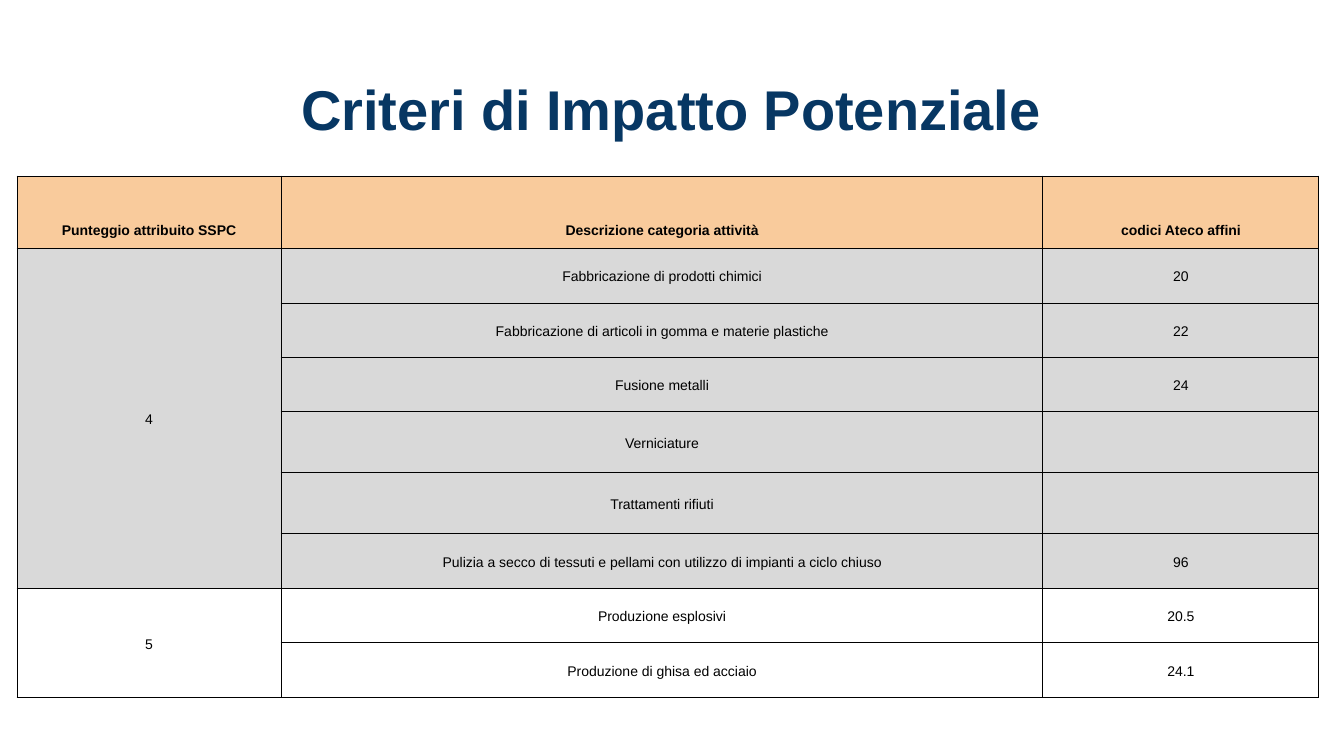
from itertools import pairwise

from lxml.etree import SubElement
from pptx import Presentation
from pptx.dml.color import RGBColor
from pptx.enum.text import MSO_ANCHOR as Anchor, PP_ALIGN as Align
from pptx.oxml.ns import qn
from pptx.util import Emu, Pt

TITLE = "Criteri di Impatto Potenziale"
HEADERS = ("Punteggio attribuito SSPC", "Descrizione categoria attività", "codici Ateco affini")
SCORE_GROUPS = [
    ("4", "grey", [
        ("Fabbricazione di prodotti chimici", "20"),
        ("Fabbricazione di articoli in gomma e materie plastiche", "22"),
        ("Fusione metalli", "24"),
        ("Verniciature", ""),
        ("Trattamenti rifiuti", ""),
        ("Pulizia a secco di tessuti e pellami con utilizzo di impianti a ciclo chiuso", "96"),
    ]),
    ("5", None, [
        ("Produzione esplosivi", "20.5"),
        ("Produzione di ghisa ed acciaio", "24.1"),
    ]),
]
COLORS = {"navy": "073763", "peach": "F9CB9C", "grey": "D9D9D9", "black": "000000"}
FONT = "Arial"
SLIDE_SIZE = (1344, 756)
TITLE_BOX = (174, 64, 994, 88)
COLUMN_EDGES = (17, 281, 1043, 1319)
ROW_EDGES = (176, 248, 303, 358, 412, 473, 534, 589, 643, 698)
INSET_X, INSET_Y = 3, 10


def px(value):
    return Emu(round(value * 914400 / 100.8))


def write(paragraph, text, size, color, bold):
    paragraph.alignment = Align.CENTER
    if text:
        run = paragraph.add_run()
        run.text = text
        run.font.name = FONT
        run.font.size = Pt(size)
        run.font.bold = bold
        run.font.color.rgb = RGBColor.from_string(COLORS[color])


def add_borders(cell):
    properties = cell._tc.get_or_add_tcPr()
    for index, side in enumerate(("lnL", "lnR", "lnT", "lnB")):
        line = SubElement(properties, qn(f"a:{side}"), w=str(Pt(0.75)))
        fill = SubElement(line, qn("a:solidFill"))
        SubElement(fill, qn("a:srgbClr"), val=COLORS["black"])
        properties.insert(index, line)


def style_cell(cell, text, fill, header):
    cell.margin_left = cell.margin_right = px(INSET_X)
    cell.margin_top = cell.margin_bottom = px(INSET_Y)
    cell.vertical_anchor = Anchor.BOTTOM if header else Anchor.MIDDLE
    if fill:
        cell.fill.solid()
        cell.fill.fore_color.rgb = RGBColor.from_string(COLORS[fill])
    else:
        cell.fill.background()
    paragraph = cell.text_frame.paragraphs[0]
    paragraph.line_spacing = 1.15
    write(paragraph, text, 10, "black", header)
    add_borders(cell)


def add_criteria_table(slide):
    left, right = COLUMN_EDGES[0], COLUMN_EDGES[-1]
    top, bottom = ROW_EDGES[0], ROW_EDGES[-1]
    table = slide.shapes.add_table(
        len(ROW_EDGES) - 1, len(HEADERS), px(left), px(top), px(right - left), px(bottom - top)
    ).table
    table.first_row = table.horz_banding = False
    for column, (start, end) in zip(table.columns, pairwise(COLUMN_EDGES)):
        column.width = px(end - start)
    for row, (start, end) in zip(table.rows, pairwise(ROW_EDGES)):
        row.height = px(end - start)

    rows = [(HEADERS, "peach")]
    for score, fill, activities in SCORE_GROUPS:
        first = len(rows)
        for index, activity in enumerate(activities):
            rows.append(((score if index == 0 else "", *activity), fill))
        table.cell(first, 0).merge(table.cell(len(rows) - 1, 0))
    for row_index, (texts, fill) in enumerate(rows):
        for column_index, text in enumerate(texts):
            style_cell(table.cell(row_index, column_index), text, fill, row_index == 0)


def add_title(slide):
    frame = slide.shapes.add_textbox(*map(px, TITLE_BOX)).text_frame
    frame.word_wrap = True
    frame.margin_left = frame.margin_right = px(10)
    frame.margin_top = frame.margin_bottom = px(10)
    write(frame.paragraphs[0], TITLE, 40, "navy", True)


def main():
    presentation = Presentation()
    presentation.slide_width, presentation.slide_height = map(px, SLIDE_SIZE)
    slide = presentation.slides.add_slide(presentation.slide_layouts[6])
    add_criteria_table(slide)
    add_title(slide)
    presentation.save("out.pptx")


if __name__ == "__main__":
    main()
